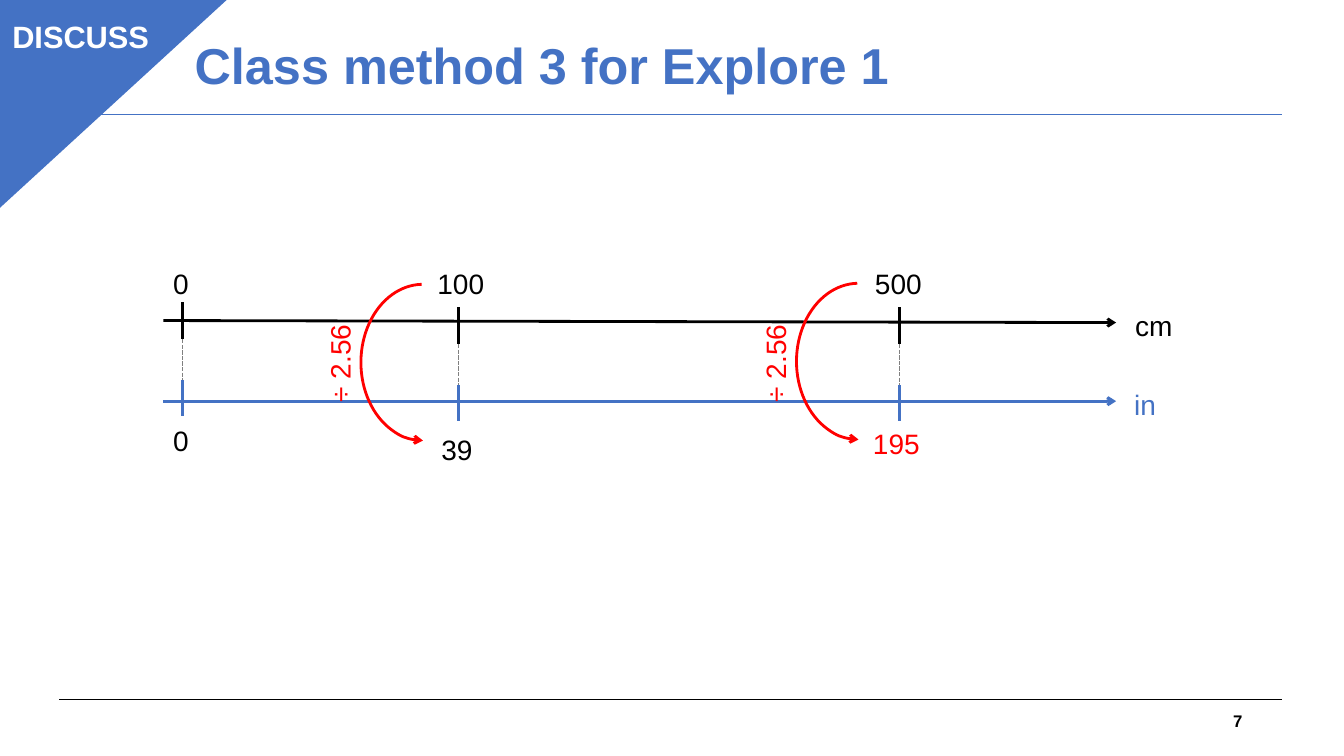
from dataclasses import dataclass

from lxml import etree
from pptx import Presentation
from pptx.dml.color import RGBColor
from pptx.enum.dml import MSO_LINE
from pptx.enum.shapes import MSO_CONNECTOR, MSO_SHAPE
from pptx.enum.text import MSO_ANCHOR, PP_ALIGN
from pptx.oxml.ns import qn
from pptx.util import Inches, Pt

STRAIGHT = MSO_CONNECTOR.STRAIGHT
TRIANGLE = MSO_SHAPE.ISOSCELES_TRIANGLE
RECTANGLE = MSO_SHAPE.RECTANGLE
ARC = MSO_SHAPE.ARC
DASH = MSO_LINE.SQUARE_DOT
MIDDLE = MSO_ANCHOR.MIDDLE
LEFT, CENTER, RIGHT = PP_ALIGN.LEFT, PP_ALIGN.CENTER, PP_ALIGN.RIGHT
TITLE_ONLY = 5


@dataclass(frozen=True)
class Theme:
    font: str = "Arial"
    blue: RGBColor = RGBColor(0x44, 0x72, 0xC4)
    black: RGBColor = RGBColor(0, 0, 0)
    gray: RGBColor = RGBColor(0x80, 0x80, 0x80)
    red: RGBColor = RGBColor(0xFF, 0, 0)
    white: RGBColor = RGBColor(0xFF, 0xFF, 0xFF)
    title_size: int = 36
    badge_size: int = 22
    label_size: int = 20
    number_size: int = 12


@dataclass(frozen=True)
class Mark:
    x: float
    tick_top: float
    upper: str
    upper_left: float
    lower: str
    lower_left: float
    lower_top: float
    label_width: float
    lower_color: RGBColor


THEME = Theme()
MARKS = (
    Mark(1.81, 3.0, "0", 1.62, "0", 1.62, 4.15, 0.36, THEME.black),
    Mark(4.55, 3.05, "100", 4.24, "39", 4.28, 4.24, 0.73, THEME.black),
    Mark(8.92, 3.05, "500", 8.58, "195", 8.56, 4.18, 0.73, THEME.red),
)
TICK_LENGTH = 0.36
TICK_GAP = 0.77
UPPER_LABEL_TOP = 2.59
LABEL_HEIGHT = 0.44


def write(shape, text, size, color, bold=False, align=LEFT):
    paragraph = shape.text_frame.paragraphs[0]
    paragraph.alignment = align
    run = paragraph.add_run()
    run.text = text
    run.font.name = THEME.font
    run.font.size = Pt(size)
    run.font.bold = bold
    run.font.color.rgb = color
    return paragraph


def add_arrowhead(shape):
    line = shape.line._get_or_add_ln()
    etree.SubElement(line, qn("a:tailEnd"), type="arrow")


def add_line(slide, start, end, color, width, dashed=False, arrow=False):
    connector = slide.shapes.add_connector(
        STRAIGHT, *(Inches(value) for value in (*start, *end)))
    connector.line.color.rgb = color
    connector.line.width = Pt(width)
    if dashed:
        connector.line.dash_style = DASH
    if arrow:
        add_arrowhead(connector)
    etree.SubElement(connector._element.spPr, qn("a:effectLst"))


def add_filled_shape(slide, kind, left, top, width, height, line_width):
    shape = slide.shapes.add_shape(
        kind, Inches(left), Inches(top), Inches(width), Inches(height))
    shape.shadow.inherit = False
    shape.fill.solid()
    shape.fill.fore_color.rgb = THEME.blue
    shape.line.color.rgb = THEME.blue
    shape.line.width = Pt(line_width)
    return shape


def add_label(slide, text, left, top, width, color, rotation=0):
    box = slide.shapes.add_textbox(
        Inches(left), Inches(top), Inches(width), Inches(LABEL_HEIGHT))
    box.rotation = rotation
    box.text_frame.word_wrap = True
    write(box, text, THEME.label_size, color)


def add_title(slide, text):
    title = slide.shapes.title
    title.left, title.top = Inches(1.83), Inches(0.12)
    title.width, title.height = Inches(8.69), Inches(1.11)
    title.text_frame.vertical_anchor = MIDDLE
    paragraph = write(title, text, THEME.title_size, THEME.blue, bold=True)
    paragraph.line_spacing = 0.9


def add_slide_number(slide, text):
    box = slide.shapes.add_textbox(
        Inches(9.42), Inches(6.95), Inches(3), Inches(0.4))
    box.text_frame.word_wrap = True
    box.text_frame.vertical_anchor = MIDDLE
    write(box, text, THEME.number_size, THEME.black, bold=True, align=RIGHT)


def add_corner_badge(slide, text):
    corner = add_filled_shape(slide, TRIANGLE, -0.03, -0.02, 2.29, 2.1, 1)
    corner.adjustments[0] = 0
    corner._element.spPr.xfrm.set("flipV", "1")
    badge = add_filled_shape(slide, RECTANGLE, 0.01, 0.12, 1.58, 0.47, 0.75)
    write(badge, text, THEME.badge_size, THEME.white, bold=True, align=CENTER)


def add_mark(slide, mark):
    top = mark.tick_top
    add_line(slide, (mark.x, top + 0.2), (mark.x, top + 0.97),
             THEME.gray, 1, dashed=True)
    for tick_top, color in ((top, THEME.black), (top + TICK_GAP, THEME.blue)):
        add_line(slide, (mark.x, tick_top), (mark.x, tick_top + TICK_LENGTH),
                 color, 2)
    add_label(slide, mark.upper, mark.upper_left, UPPER_LABEL_TOP,
              mark.label_width, THEME.black)
    add_label(slide, mark.lower, mark.lower_left, mark.lower_top,
              mark.label_width, mark.lower_color)


def add_conversion(slide, text, left, top):
    arc = slide.shapes.add_shape(
        ARC, Inches(left), Inches(top), Inches(1.55), Inches(1.23))
    arc.shadow.inherit = False
    arc.adjustments[0] = 108.54
    arc.adjustments[1] = 0
    arc.rotation = 90
    arc._element.spPr.xfrm.set("flipV", "1")
    arc.fill.background()
    arc.line.color.rgb = THEME.red
    arc.line.width = Pt(2)
    add_arrowhead(arc)
    add_label(slide, text, left - 0.55, 3.37, 1, THEME.red, rotation=270)


def main():
    presentation = Presentation()
    presentation.slide_width = Inches(13.33)
    presentation.slide_height = Inches(7.5)
    slide = presentation.slides.add_slide(
        presentation.slide_layouts[TITLE_ONLY])

    for y, color in ((6.94, THEME.black), (1.14, THEME.blue)):
        add_line(slide, (0.59, y), (12.72, y), color, 0.75)
    add_title(slide, "Class method 3 for Explore 1")
    add_slide_number(slide, "7")
    add_corner_badge(slide, "DISCUSS")

    add_line(slide, (1.62, 3.18), (11.07, 3.2), THEME.black, 2, arrow=True)
    add_line(slide, (1.62, 3.98), (11.07, 3.98), THEME.blue, 2, arrow=True)
    add_label(slide, "cm", 11.16, 3.01, 0.58, THEME.black)
    add_label(slide, "in", 11.15, 3.8, 0.42, THEME.blue)
    for mark in MARKS:
        add_mark(slide, mark)
    for left, top in ((3.42, 2.98), (7.74, 2.97)):
        add_conversion(slide, "÷ 2.56", left, top)

    presentation.save("out.pptx")


if __name__ == "__main__":
    main()
